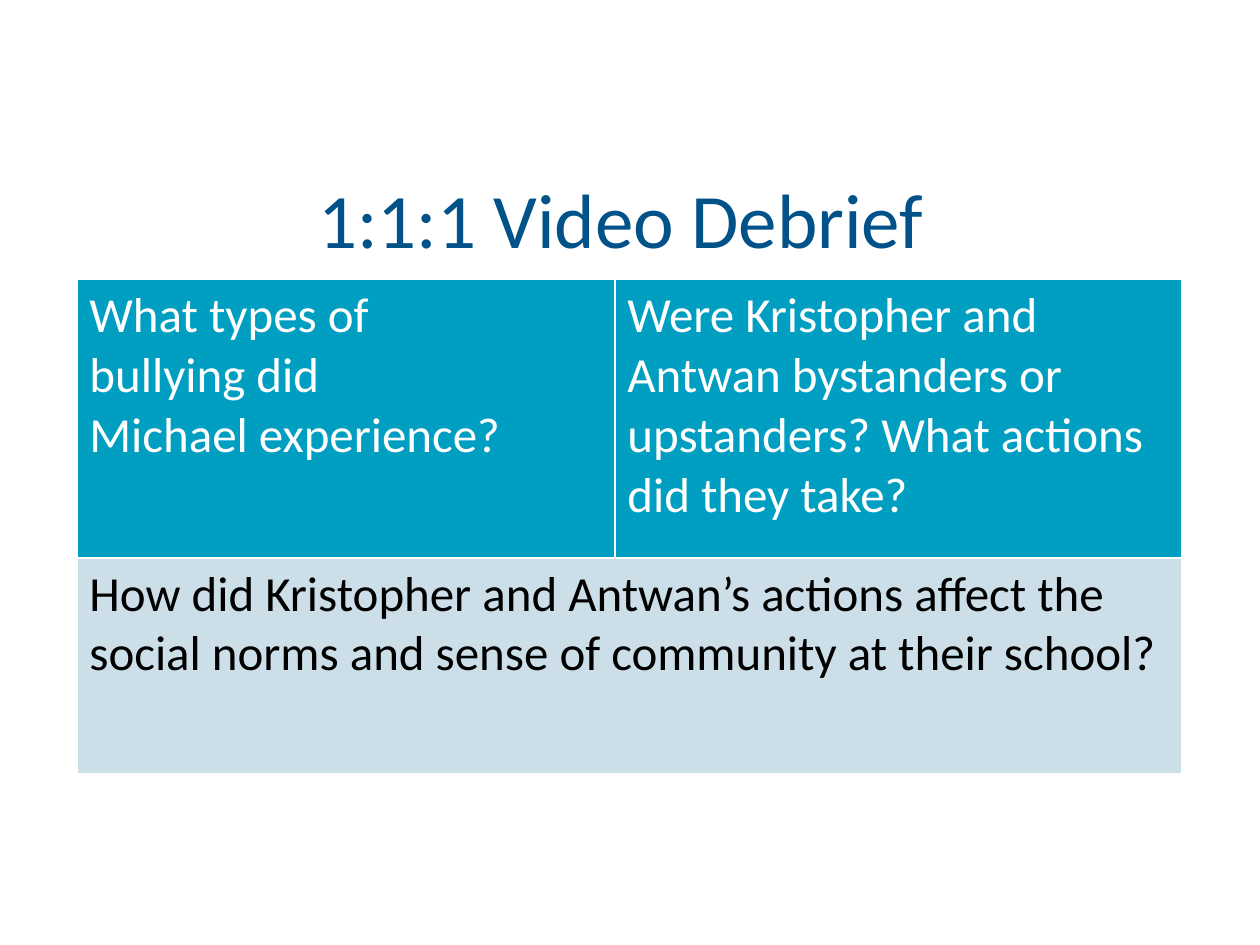
"""Build the video debrief slide with its question table."""
from pptx import Presentation
from pptx.dml.color import RGBColor
from pptx.enum.text import MSO_ANCHOR, PP_ALIGN
from pptx.util import Inches, Pt


def rgb(value):
    return RGBColor.from_string(value)


def write(tf, text, size, color):
    tf.text = text
    for p in tf.paragraphs:
        for key, value in {"name": "Calibri", "size": Pt(size), "bold": False}.items():
            setattr(p.font, key, value)
            for r in p.runs:
                setattr(r.font, key, value)
                r.font.color.rgb = rgb(color)


prs = Presentation()
prs.slide_width, prs.slide_height = Inches(10), Inches(7.5)
s = prs.slides.add_slide(prs.slide_layouts[6])

tf = s.shapes.add_textbox(Inches(0.5), Inches(1.05), Inches(9), Inches(1.35)).text_frame
tf.word_wrap = True
tf.vertical_anchor = MSO_ANCHOR.MIDDLE
write(tf, "1:1:1 Video Debrief ", 44, "005288")
tf.paragraphs[0].alignment = PP_ALIGN.CENTER

widths, heights = [4.27, 4.5], [2.21, 1.71]
table = s.shapes.add_table(2, 2, Inches(0.61), Inches(2.22),
                           Inches(sum(widths)), Inches(sum(heights))).table
for col, width in zip(table.columns, widths):
    col.width = Inches(width)
for row, height in zip(table.rows, heights):
    row.height = Inches(height)
table.cell(1, 0).merge(table.cell(1, 1))

questions = [
    (0, 0, "What types of\nbullying did\nMichael experience?", "FFFFFF", "009FC2"),
    (0, 1, "Were Kristopher and Antwan bystanders or upstanders? "
           "What actions did they take?", "FFFFFF", "009FC2"),
    (1, 0, "How did Kristopher and Antwan’s actions affect the social norms "
           "and sense of community at their school?", "000000", "CCDFE9"),
]
for row, col, text, color, fill in questions:
    cell = table.cell(row, col)
    cell.fill.solid()
    cell.fill.fore_color.rgb = rgb(fill)
    write(cell.text_frame, text, 28, color)

prs.save("out.pptx")
